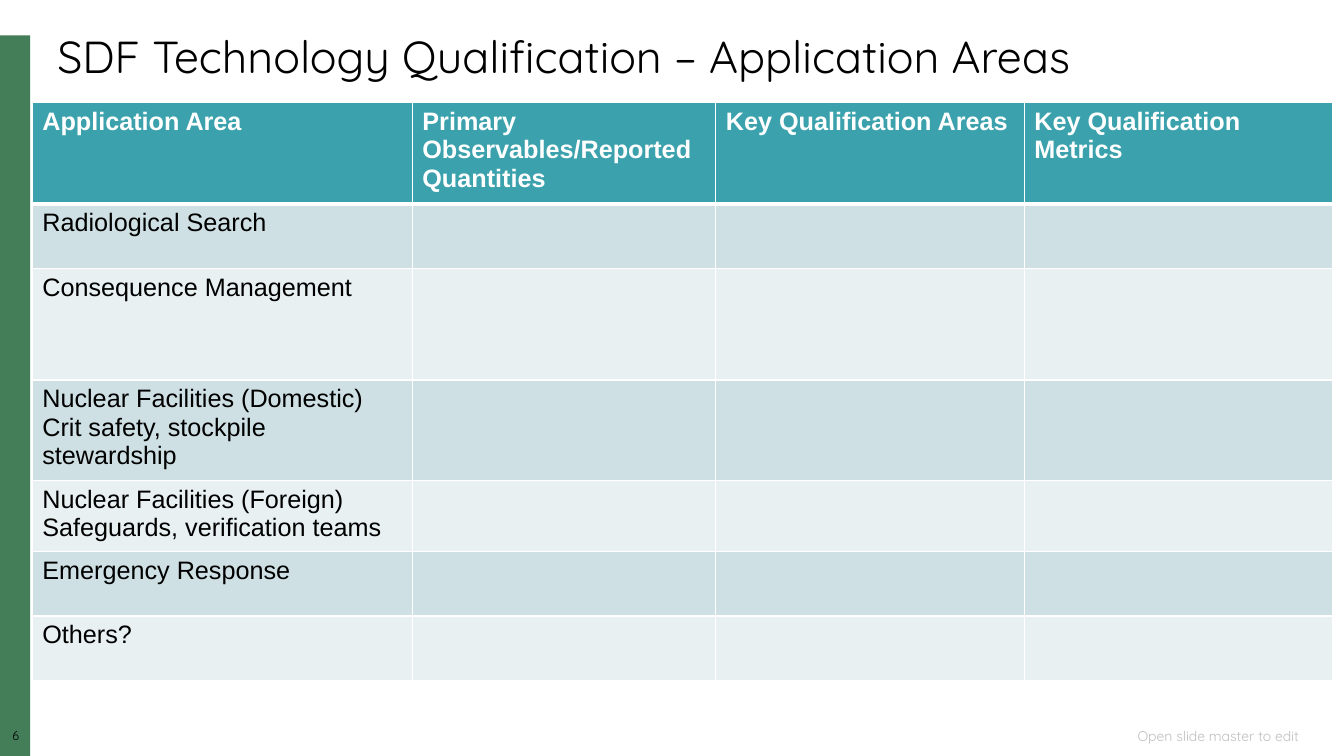
from lxml import etree
from pptx import Presentation
from pptx import util as u
from pptx.dml import color
from pptx.enum import shapes, text
from pptx.oxml import ns

COLOURS = {
    "ink": "000000",
    "paper": "FFFFFF",
    "green": "447E59",
    "footer": "BFBFBF",
    "header": "3BA2AD",
    "dark_band": "CEE0E3",
    "light_band": "E8F0F1",
}
HEADINGS = [
    "Application Area",
    "Primary Observables/Reported Quantities",
    "Key Qualification Areas",
    "Key Qualification Metrics",
]
AREAS = [
    ["Radiological Search"],
    ["Consequence Management"],
    ["Nuclear Facilities (Domestic)", "Crit safety, stockpile stewardship"],
    ["Nuclear Facilities (Foreign)", "Safeguards, verification teams"],
    ["Emergency Response"],
    ["Others?"],
]
COLUMN_WIDTHS = [3.77, 3.01, 3.06, 3.06]
ROW_HEIGHTS = [0.65, 0.64, 1.11, 0.64, 0.64, 0.64, 0.64]


class SlideBuilder:
    """Draws styled elements on the current slide."""

    def __init__(self, page):
        self.page = page
        self.display_font = "Quicksand"
        self.table_font = "Arial"

    def colour(self, name):
        return color.RGBColor.from_string(COLOURS[name])

    def fill(self, item, name):
        item.fill.solid()
        item.fill.fore_color.rgb = self.colour(name)

    def run(self, para, words, font, size, ink, bold=False):
        span = para.add_run()
        span.text = words
        span.font.name = font
        span.font.size = u.Pt(size)
        span.font.bold = bold
        span.font.color.rgb = self.colour(ink)

    def bar(self, place, name):
        bar = self.page.shapes.add_shape(
            shapes.MSO_SHAPE.RECTANGLE, *map(u.Inches, place))
        bar.shadow.inherit = False
        self.fill(bar, name)
        bar.line.fill.background()

    def label(self, place, words, size, ink="ink", align=text.PP_ALIGN.LEFT,
              anchor=text.MSO_ANCHOR.TOP, spacing=None, inset=True):
        box = self.page.shapes.add_textbox(*map(u.Inches, place))
        frame = box.text_frame
        frame.word_wrap = True
        frame.vertical_anchor = anchor
        if not inset:
            frame.margin_left = frame.margin_right = 0
            frame.margin_top = frame.margin_bottom = 0
        para = frame.paragraphs[0]
        para.alignment = align
        para.line_spacing = spacing
        self.run(para, words, self.display_font, size, ink)

    def borders(self, cell, top, bottom):
        properties = cell._tc.get_or_add_tcPr()
        for side, width in (("L", 1), ("R", 1), ("T", top), ("B", bottom)):
            line = etree.SubElement(properties, ns.qn(f"a:ln{side}"),
                                    w=str(u.Pt(width)))
            solid = etree.SubElement(line, ns.qn("a:solidFill"))
            etree.SubElement(solid, ns.qn("a:srgbClr"), val=COLOURS["paper"])

    def cell(self, cell, lines, band, ink, bold, top, bottom):
        self.borders(cell, top, bottom)
        self.fill(cell, band)
        frame = cell.text_frame
        frame.paragraphs[0].font.size = u.Pt(18)
        for index, words in enumerate(lines):
            para = frame.add_paragraph() if index else frame.paragraphs[0]
            self.run(para, words, self.table_font, 18, ink, bold)

    def table(self, left, top, headings, areas):
        rows = [[[heading] for heading in headings]]
        rows += [[area] + [[]] * (len(headings) - 1) for area in areas]
        table = self.page.shapes.add_table(
            len(rows), len(headings), u.Inches(left), u.Inches(top),
            u.Inches(sum(COLUMN_WIDTHS)), u.Inches(sum(ROW_HEIGHTS))).table
        for column, width in zip(table.columns, COLUMN_WIDTHS):
            column.width = u.Inches(width)
        for index, row in enumerate(rows):
            table.rows[index].height = u.Inches(ROW_HEIGHTS[index])
            heading = index == 0
            band = "dark_band" if index % 2 else "light_band"
            for column, lines in enumerate(row):
                self.cell(table.cell(index, column), lines,
                          "header" if heading else band,
                          "paper" if heading else "ink", heading,
                          top=3 if index == 1 else 1,
                          bottom=3 if heading else 1)


def main():
    deck = Presentation()
    deck.slide_width, deck.slide_height = u.Inches(13.33), u.Inches(7.5)
    builder = SlideBuilder(deck.slides.add_slide(deck.slide_layouts[6]))
    builder.bar((0, 0.35, 0.3, 7.15), "green")
    builder.label((0, 7.24, 0.31, 0.17), "6", 9, spacing=0.9, inset=False,
                  align=text.PP_ALIGN.CENTER)
    builder.label((8.76, 7.2, 4.22, 0.2), "Open slide master to edit", 10,
                  ink="footer", align=text.PP_ALIGN.RIGHT,
                  anchor=text.MSO_ANCHOR.MIDDLE)
    builder.label((0.47, 0.3, 12.5, 0.59),
                  "SDF Technology Qualification – Application Areas", 32,
                  spacing=0.9)
    builder.table(0.32, 1.02, HEADINGS, AREAS)
    deck.save("out.pptx")


if __name__ == "__main__":
    main()
